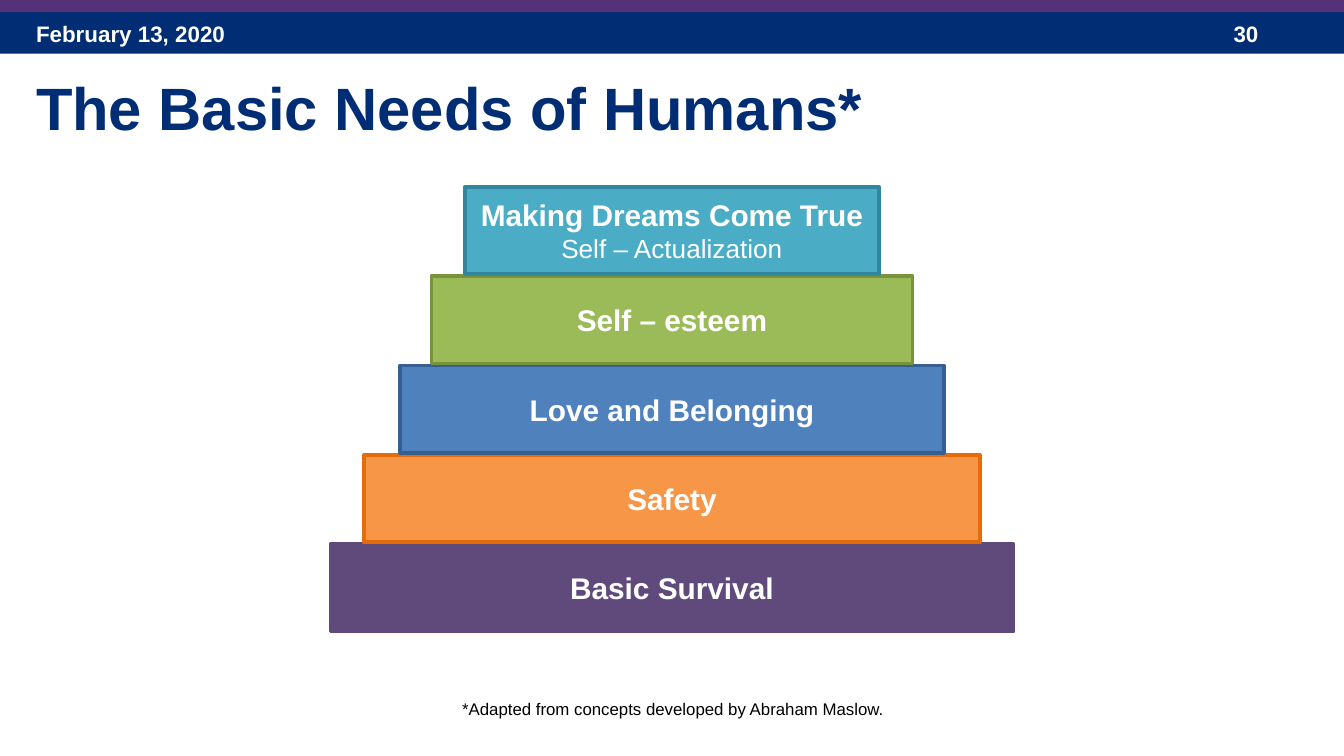
from pptx import Presentation
from pptx.dml.color import RGBColor
from pptx.enum.shapes import MSO_SHAPE
from pptx.enum.text import MSO_ANCHOR, PP_ALIGN
from pptx.util import Inches, Pt

RECT = MSO_SHAPE.RECTANGLE
TOP, MIDDLE = MSO_ANCHOR.TOP, MSO_ANCHOR.MIDDLE
LEFT, CENTER = PP_ALIGN.LEFT, PP_ALIGN.CENTER
COLORS = {
    "navy": "002D73", "violet": "553278", "white": "FFFFFF", "black": "000000",
    "purple": "604A7B", "orange": "F79646", "rust": "E46C0A",
    "blue": "4F81BD", "steel": "376092", "green": "9BBB59", "olive": "77933C",
    "aqua": "4BACC6", "teal": "31859C",
}

# Widescreen slide, 16 to 9
WIDE = 10
prs = Presentation()
prs.slide_width, prs.slide_height = Inches(WIDE), Inches(WIDE * 9 / 16)
slide = prs.slides.add_slide(prs.slide_layouts[6])


def add_rect(x, y, w, h, fill, line=None):
    box = slide.shapes.add_shape(RECT, Inches(x), Inches(y), Inches(w), Inches(h))
    box.shadow.inherit = False
    box.fill.solid()
    box.fill.fore_color.rgb = RGBColor.from_string(COLORS[fill])
    if line:
        box.line.color.rgb = RGBColor.from_string(COLORS[line])
        box.line.width = Pt(2)
    else:
        box.line.fill.background()
    return box


def add_lines(frame, lines, color, align, anchor):
    frame.vertical_anchor = anchor
    for i, (text, size, bold) in enumerate(lines):
        para = frame.add_paragraph() if i else frame.paragraphs[0]
        para.alignment = align
        run = para.add_run()
        run.text = text
        run.font.name = "Arial"
        run.font.size = Pt(size)
        run.font.bold = bold
        run.font.color.rgb = RGBColor.from_string(COLORS[color])


# Header bands
add_rect(0, 0.07, WIDE, 0.33, "navy")
add_rect(0, 0, WIDE, 0.09, "violet")

# Date, page number, title and footnote
labels = [
    (0.17, 0.1, 2.33, 0.3, "February 13, 2020", 12, True, "white", LEFT),
    (9.08, 0.1, 0.75, 0.3, "30", 12, True, "white", LEFT),
    (0.17, 0.48, 9.5, 0.7, "The Basic Needs of Humans*", 32, True, "navy", LEFT),
    (3.31, 5.15, 3.39, 0.25, "*Adapted from concepts developed by Abraham Maslow.",
     9, False, "black", CENTER),
]
for x, y, w, h, text, size, bold, color, align in labels:
    box = slide.shapes.add_textbox(Inches(x), Inches(y), Inches(w), Inches(h))
    box.text_frame.word_wrap = align == LEFT
    add_lines(box.text_frame, [(text, size, bold)], color, align, TOP)

# Pyramid of needs, from the base up, centred on the slide
tiers = [
    (5.08, "purple", "purple", [("Basic Survival", 16, True)]),
    (4.58, "orange", "rust", [("Safety", 16, True)]),
    (4.05, "blue", "steel", [("Love and Belonging", 16, True)]),
    (3.58, "green", "olive", [("Self – esteem", 16, True)]),
    (3.08, "aqua", "teal", [("Making Dreams Come True", 16, True),
                            ("Self – Actualization", 14, False)]),
]
BASE, PEAK, HIGH = 4.05, 1.39, 0.65
step = (BASE - PEAK) / (len(tiers) - 1)
for i, (w, fill, line, lines) in enumerate(tiers):
    tier = add_rect((WIDE - w) / 2, BASE - i * step, w, HIGH, fill, line)
    tier.text_frame.word_wrap = True
    add_lines(tier.text_frame, lines, "white", CENTER, MIDDLE)

prs.save("out.pptx")
